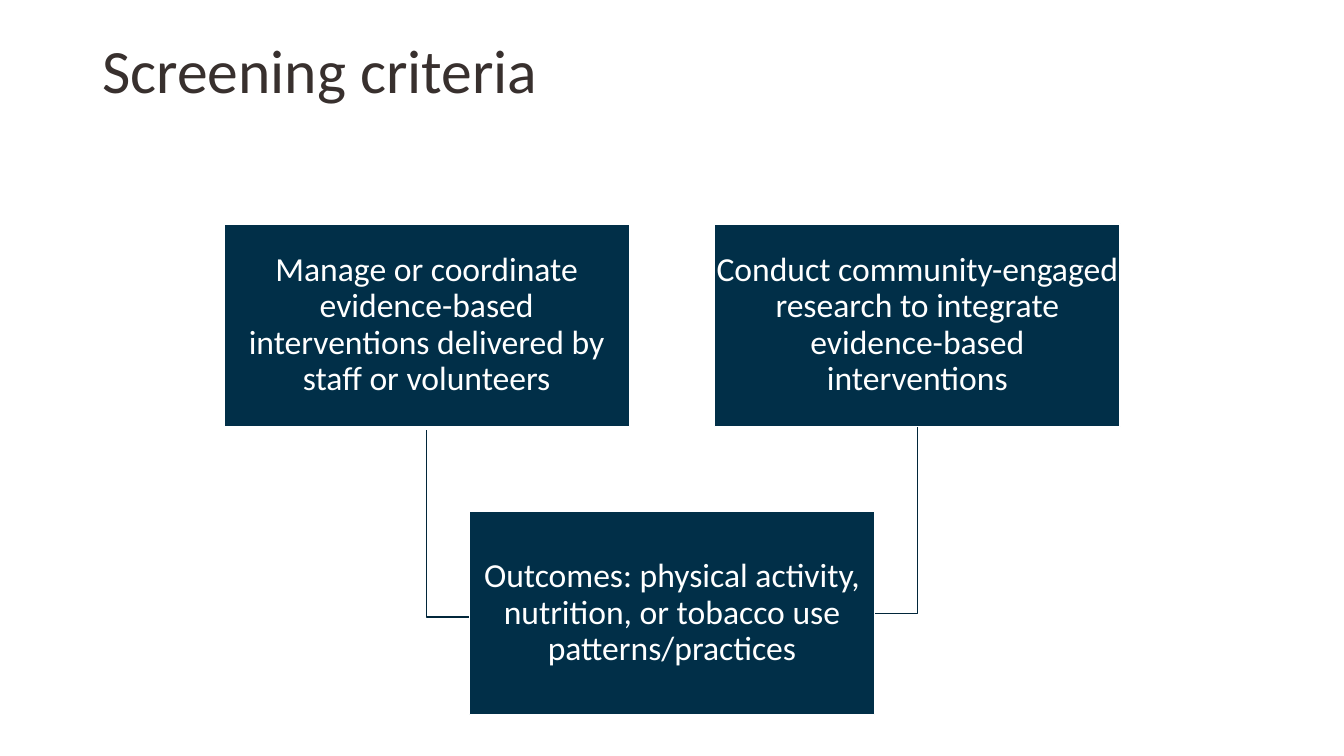
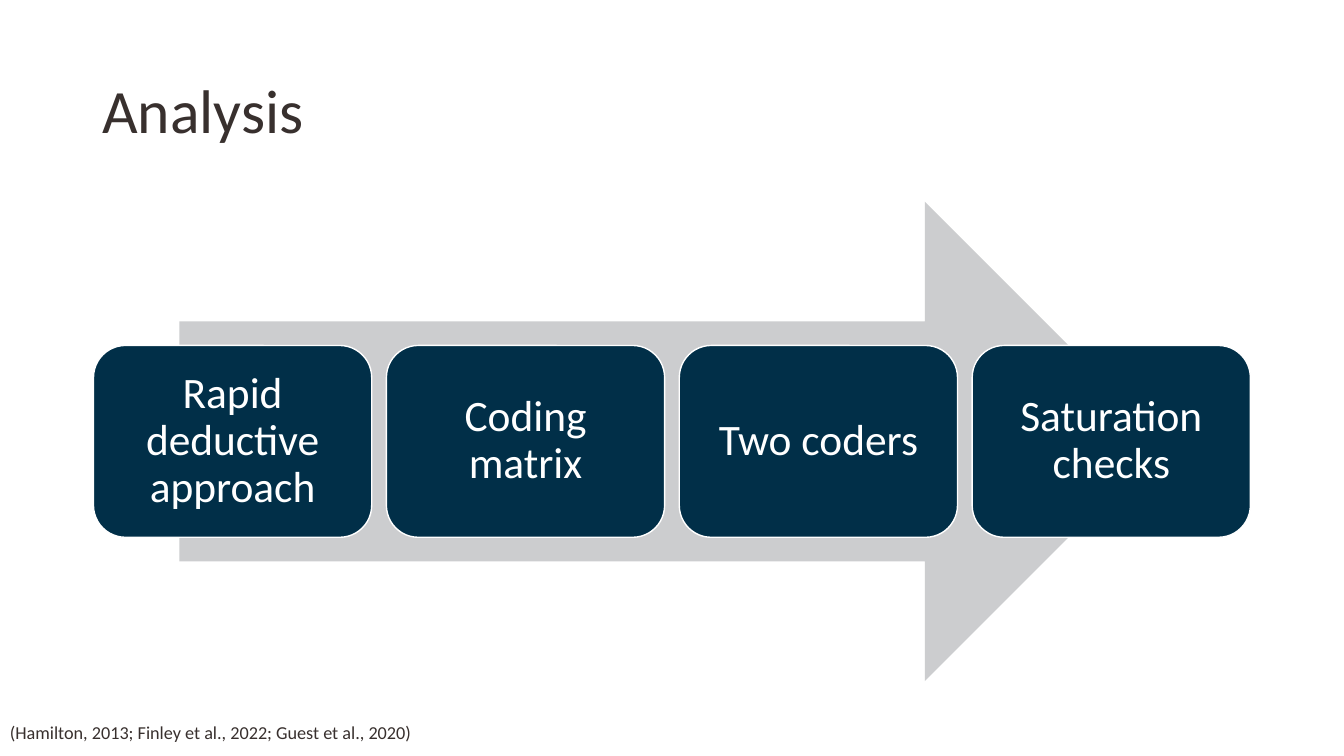
import collections

import pptx
import pptx.dml.color
import pptx.enum.shapes
import pptx.enum.text
import pptx.util

SLIDE_WIDTH, SLIDE_HEIGHT = pptx.util.Inches(13.333), pptx.util.Inches(7.5)
COLUMNS, ROWS = 160, 90
FONT = "Calibri"
NAVY, DARK_NAVY, GREY, INK, WHITE = "012F48", "01263A", "CCCDCF", "38302E", "FFFFFF"
SHAPES = pptx.enum.shapes.MSO_SHAPE
ALIGN = pptx.enum.text.PP_ALIGN
ANCHOR = pptx.enum.text.MSO_ANCHOR

# Left, top, width and height in grid columns and rows
Box = collections.namedtuple("Box", "left top width height")


def across(columns):
    return round(SLIDE_WIDTH * columns / COLUMNS)


def down(rows):
    return round(SLIDE_HEIGHT * rows / ROWS)


def place(box):
    return across(box.left), down(box.top), across(box.width), down(box.height)


def color(hex_code):
    return pptx.dml.color.RGBColor.from_string(hex_code)


def write(shape, text, size, ink, align=ALIGN.LEFT, anchor=ANCHOR.MIDDLE,
          inset=None, line_spacing=0.9):
    frame = shape.text_frame
    frame.word_wrap = True
    frame.vertical_anchor = anchor
    if inset is not None:
        frame.margin_left = frame.margin_right = across(inset)
        frame.margin_top = frame.margin_bottom = down(inset)
    paragraph = frame.paragraphs[0]
    paragraph.alignment = align
    paragraph.line_spacing = line_spacing
    run = paragraph.add_run()
    run.text = text
    run.font.name = FONT
    run.font.size = pptx.util.Pt(size)
    run.font.color.rgb = color(ink)


def add_block(slide, preset, box, fill, outline=None):
    block = slide.shapes.add_shape(preset, *place(box))
    block.shadow.inherit = False
    block.fill.solid()
    block.fill.fore_color.rgb = color(fill)
    if outline:
        block.line.color.rgb = color(outline)
        block.line.width = pptx.util.Pt(1)
    else:
        block.line.fill.background()
    return block


def add_label_block(slide, preset, box, text, size, inset):
    block = add_block(slide, preset, box, NAVY, WHITE)
    write(block, text, size, WHITE, ALIGN.CENTER, inset=inset)


def add_elbow(slide, start_column, start_row, end_column, end_row):
    """Draw a line that runs down and then sideways."""
    builder = slide.shapes.build_freeform(across(start_column), down(start_row))
    builder.add_line_segments(
        [(across(start_column), down(end_row)), (across(end_column), down(end_row))],
        close=False)
    elbow = builder.convert_to_shape()
    elbow.shadow.inherit = False
    elbow.fill.background()
    elbow.line.color.rgb = color(DARK_NAVY)
    elbow.line.width = pptx.util.Pt(1)


def add_titled_slide(deck, title, top):
    slide = deck.slides.add_slide(deck.slide_layouts[6])
    heading = slide.shapes.add_textbox(*place(Box(11, top, 138, 17.4)))
    write(heading, title, 44, INK)
    return slide


def add_criteria(slide, area, activities, outcomes):
    """Place two activities above the outcomes that both lead to."""
    gap_share = 0.21
    width = area.width / (2 + gap_share)
    height = width / 2
    pitch = width * (1 + gap_share)
    lower_top = area.top + height + width * gap_share
    lower_left = area.left + pitch / 2
    lower_middle = lower_top + height / 2
    upper_bottom = area.top + height

    left_center = area.left + width / 2
    add_elbow(slide, left_center + pitch, upper_bottom, lower_left + width, lower_middle)
    boxes = [Box(area.left + i * pitch, area.top, width, height)
             for i in range(len(activities))]
    boxes.append(Box(lower_left, lower_top, width, height))
    for box, text in zip(boxes, [*activities, outcomes]):
        add_label_block(slide, SHAPES.RECTANGLE, box, text, 24, inset=0.2)
    drop = 0.45
    add_elbow(slide, left_center, upper_bottom + drop, lower_left, lower_middle + drop)


def add_process(slide, area, steps):
    """Place evenly spaced steps over a wide arrow."""
    arrow_share, step_share, span_share, height_share = 0.85, 0.24, 0.998, 0.4
    arrow_width = area.width * arrow_share
    arrow_left = area.left + (area.width - arrow_width) / 2
    add_block(slide, SHAPES.RIGHT_ARROW,
              Box(arrow_left, area.top, arrow_width, area.height), GREY)

    width, height = area.width * step_share, area.height * height_share
    span = area.width * span_share
    pitch = (span - width) / (len(steps) - 1)
    left = area.left + (area.width - span) / 2
    top = area.top + (area.height - height) / 2
    for i, step in enumerate(steps):
        add_label_block(slide, SHAPES.ROUNDED_RECTANGLE,
                        Box(left + i * pitch, top, width, height), step, 31, inset=1.56)


def add_citation(slide, text):
    citation = slide.shapes.add_textbox(*place(Box(0, 85.3, 79.4, 3.9)))
    write(citation, text, 13, INK, anchor=ANCHOR.TOP, line_spacing=1.0)


def main():
    deck = pptx.Presentation()
    deck.slide_width, deck.slide_height = SLIDE_WIDTH, SLIDE_HEIGHT

    screening = add_titled_slide(deck, "Screening criteria", top=0.1)
    add_criteria(
        screening, Box(26.65, 26.65, 106.7, 58.4),
        ["Manage or coordinate evidence-based interventions delivered by staff or volunteers",
         "Conduct community-engaged research to integrate evidence-based interventions"],
        "Outcomes: physical activity, nutrition, or tobacco use patterns/practices")

    analysis = add_titled_slide(deck, "Analysis", top=4.8)
    add_process(analysis, Box(11, 24, 138, 57.1),
                ["Rapid deductive approach", "Coding matrix", "Two coders",
                 "Saturation checks"])
    add_citation(analysis, "(Hamilton, 2013; Finley et al., 2022; Guest et al., 2020)")

    deck.save("out.pptx")


if __name__ == "__main__":
    main()
